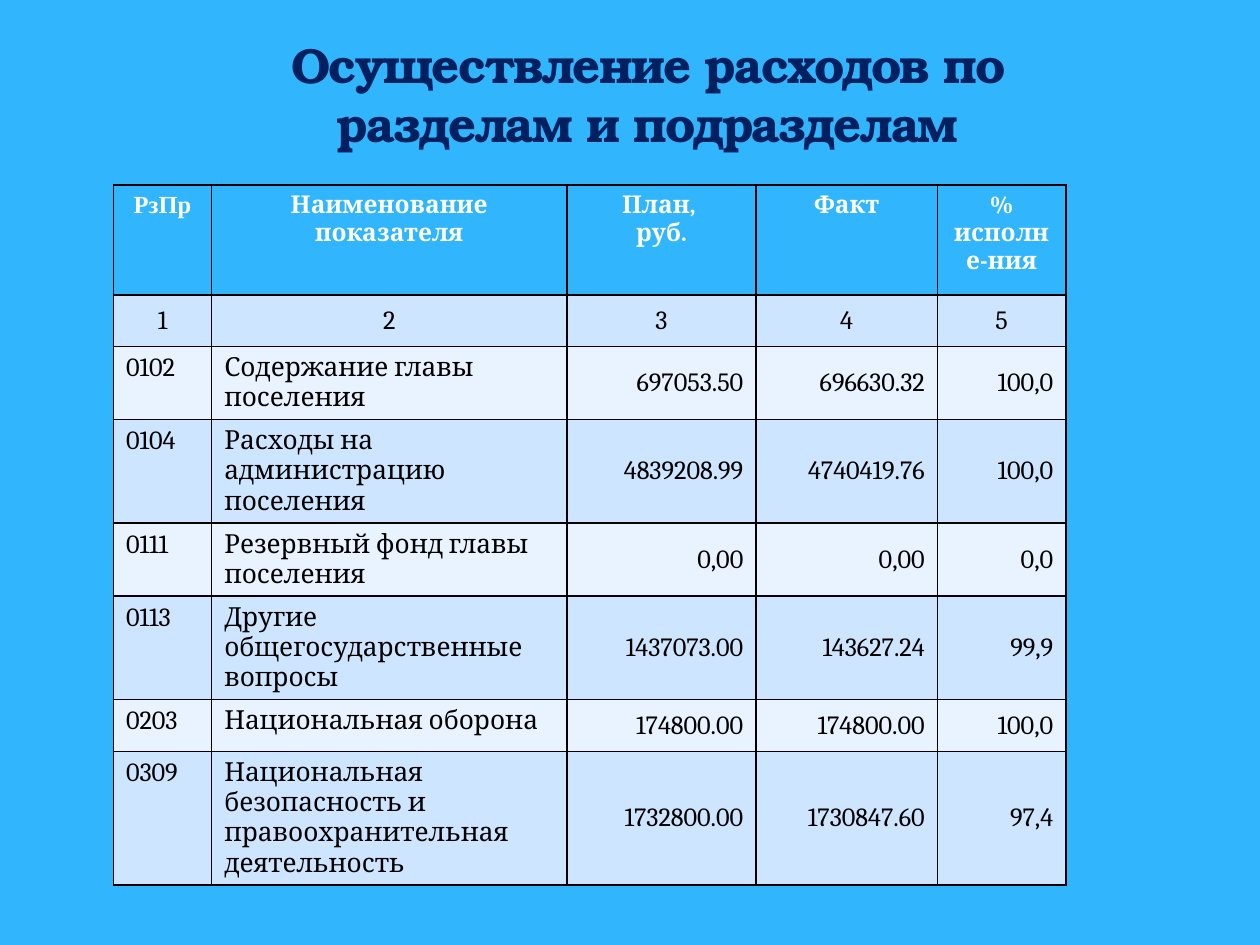
from lxml import etree
from pptx import Presentation
from pptx.dml.color import RGBColor
from pptx.enum.text import MSO_ANCHOR, MSO_AUTO_SIZE, PP_ALIGN
from pptx.oxml.ns import qn
from pptx.util import Inches, Pt

LEFT, CENTER, RIGHT = PP_ALIGN.LEFT, PP_ALIGN.CENTER, PP_ALIGN.RIGHT
TOP, MIDDLE, BOTTOM = MSO_ANCHOR.TOP, MSO_ANCHOR.MIDDLE, MSO_ANCHOR.BOTTOM
NO_AUTOFIT = MSO_AUTO_SIZE.NONE
TITLE_ONLY_LAYOUT = 5

SKY, NAVY, WHITE, BLACK = "31B6FD", "002060", "FFFFFF", "000000"
BANDS = ("E8F3FF", "CDE5FE")

TITLE = "Осуществление расходов по разделам и подразделам"
COLUMN_WIDTHS = (0.78, 2.82, 1.5, 1.44, 1.02)
HEADER_HEIGHT, ROW_HEIGHT = 0.87, 0.41
ROWS = (
    ("РзПр", "Наименование показателя", "План, \nруб.", "Факт", "% исполне-ния"),
    ("1", "2", "3", "4", "5"),
    ("0102", "Содержание главы поселения", "697053.50", "696630.32", "100,0"),
    ("0104", "Расходы на администрацию поселения", "4839208.99", "4740419.76", "100,0"),
    ("0111", "Резервный фонд главы поселения", "0,00", "0,00", "0,0"),
    ("0113", "Другие общегосударственные вопросы", "1437073.00", "143627.24", "99,9"),
    ("0203", "Национальная оборона", "174800.00", "174800.00", "100,0"),
    ("0309", "Национальная безопасность и правоохранительная деятельность",
     "1732800.00", "1730847.60", "97,4"),
)


def color(hex_value):
    return RGBColor.from_string(hex_value)


def apply_format(target, values):
    for name, value in values.items():
        setattr(target, name, value)


def format_text(text_frame, alignment, hex_value, font_values):
    for paragraph in text_frame.paragraphs:
        paragraph.alignment = alignment
        for run in paragraph.runs:
            apply_format(run.font, font_values)
            run.font.color.rgb = color(hex_value)


def add_cell_borders(cell):
    properties = cell._tc.get_or_add_tcPr()
    for position, side in enumerate(("a:lnL", "a:lnR", "a:lnT", "a:lnB")):
        line = etree.Element(qn(side), w=str(Pt(1)))
        fill = etree.SubElement(line, qn("a:solidFill"))
        etree.SubElement(fill, qn("a:srgbClr"), val=BLACK)
        properties.insert(position, line)


def add_title(slide, left, top, width, height):
    title = slide.shapes.title
    apply_format(title, {"left": left, "top": top, "width": width, "height": height})
    title.text = TITLE
    apply_format(title.text_frame, {
        "word_wrap": True, "vertical_anchor": BOTTOM, "auto_size": NO_AUTOFIT})
    paragraph = title.text_frame.paragraphs[0]
    paragraph.line_spacing = 1.0
    paragraph.space_before = Pt(0)
    format_text(title.text_frame, CENTER, NAVY,
                {"name": "TeX Gyre Bonum", "size": Pt(28), "bold": True})
    paragraph.runs[0].font._element.set("spc", "-100")


def cell_style(row_index, column_index):
    if row_index == 0:
        return SKY, CENTER, TOP
    fill = BANDS[row_index % 2]
    if row_index == 1:
        return fill, CENTER, MIDDLE
    return (fill, LEFT, TOP) if column_index < 2 else (fill, RIGHT, MIDDLE)


def add_expense_table(slide, left, top, width, height):
    frame = slide.shapes.add_table(len(ROWS), len(COLUMN_WIDTHS), left, top, width, height)
    table = frame.table
    for column, column_width in zip(table.columns, COLUMN_WIDTHS):
        column.width = Inches(column_width)
    for row_index, texts in enumerate(ROWS):
        is_header = row_index == 0
        table.rows[row_index].height = Inches(HEADER_HEIGHT if is_header else ROW_HEIGHT)
        for column_index, text in enumerate(texts):
            cell = table.cell(row_index, column_index)
            fill, alignment, anchor = cell_style(row_index, column_index)
            cell.text = text
            cell.vertical_anchor = anchor
            cell.fill.solid()
            cell.fill.fore_color.rgb = color(fill)
            add_cell_borders(cell)
            is_code_header = is_header and column_index == 0
            format_text(cell.text_frame, alignment, WHITE if is_header else BLACK, {
                "name": "Times New Roman" if is_code_header else "Cambria",
                "size": Pt(14 if is_header else 15),
                "bold": is_header,
            })
    frame.height = height


def main():
    presentation = Presentation()
    apply_format(presentation, {"slide_width": Inches(10), "slide_height": Inches(7.5)})
    slide = presentation.slides.add_slide(presentation.slide_layouts[TITLE_ONLY_LAYOUT])
    slide.background.fill.solid()
    slide.background.fill.fore_color.rgb = color(SKY)
    add_expense_table(slide, Inches(0.9), Inches(1.47), Inches(7.56), Inches(5.43))
    add_title(slide, Inches(1.3), Inches(0.76), Inches(7.68), Inches(0.5))
    presentation.save("out.pptx")


if __name__ == "__main__":
    main()
